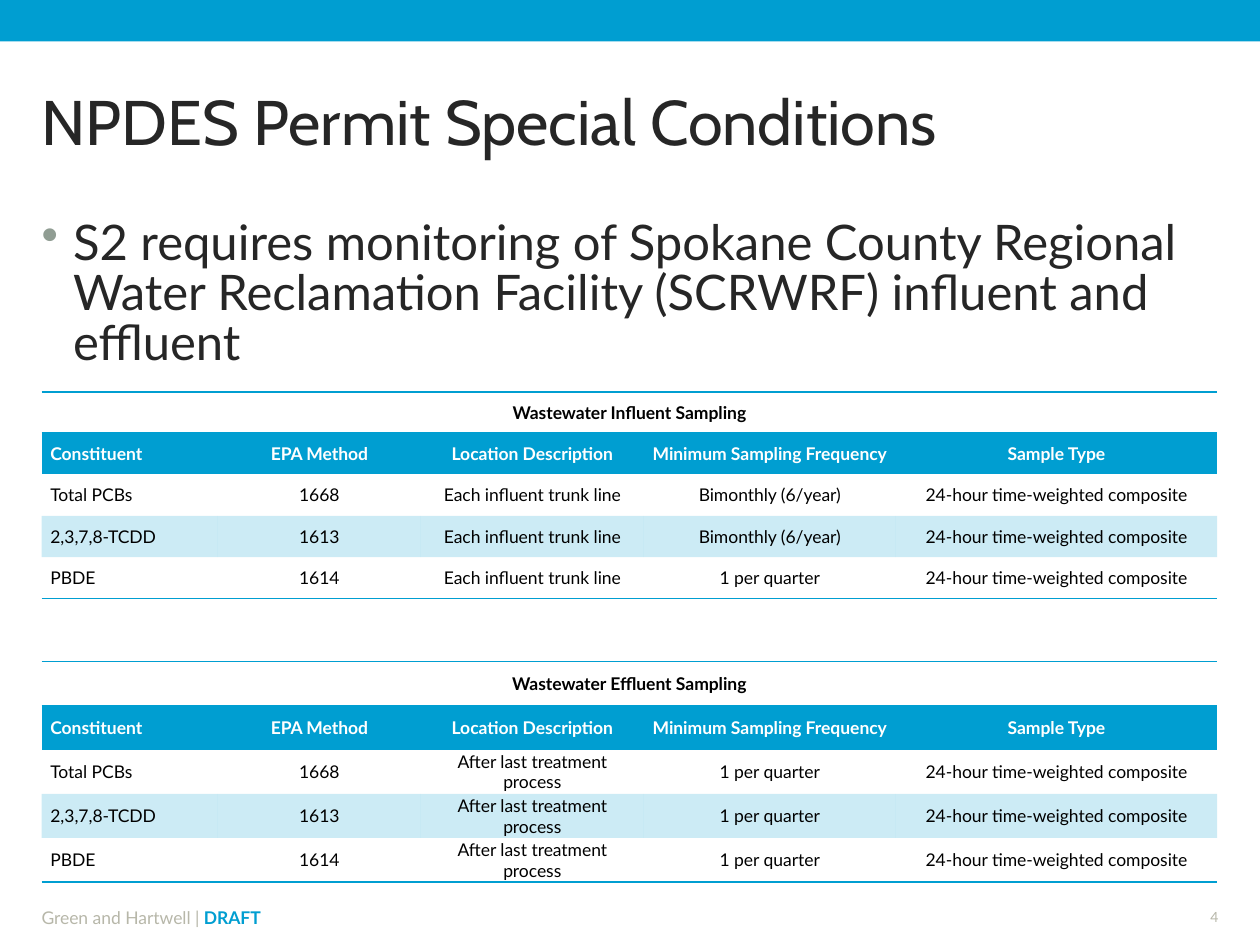
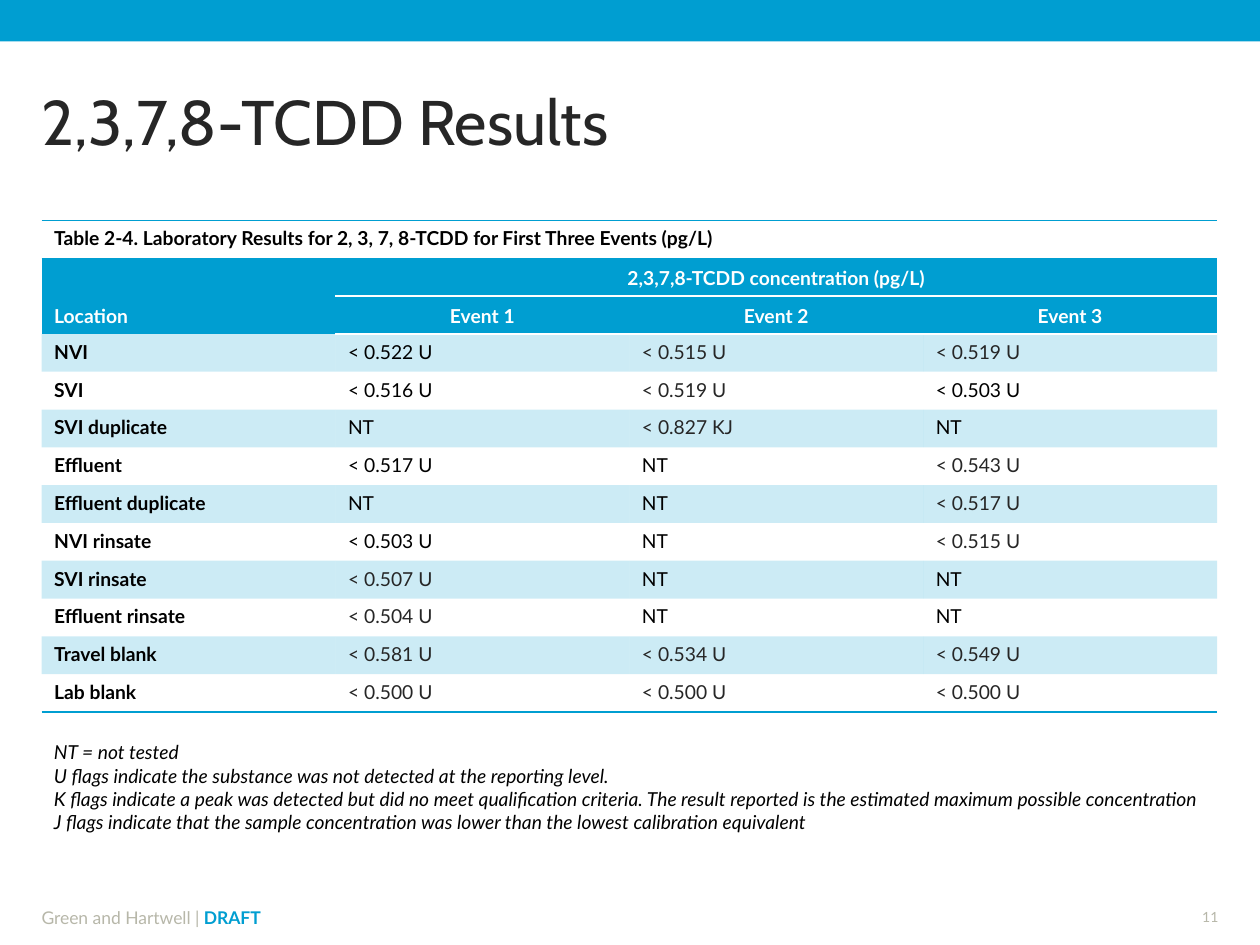
from dataclasses import dataclass, replace
from typing import Optional

from lxml.etree import SubElement
from pptx import Presentation
from pptx.dml.color import RGBColor
from pptx.enum.shapes import MSO_SHAPE
from pptx.enum.text import MSO_ANCHOR as Anchor, PP_ALIGN as Align
from pptx.oxml.ns import qn
from pptx.util import Inches, Pt

COLORS = {
    "blue": "009ED1",
    "ink": "262626",
    "black": "000000",
    "white": "FFFFFF",
    "footer": "B7B7A9",
    "bullet": "909D93",
}
LEFT, CONTENT_WIDTH = 0.33, 9.33
PLAIN_TABLE_STYLE = "{2D5ABB26-0587-4C30-8999-92F81FD0307C}"
TINT_PERCENT = 20


@dataclass(frozen=True)
class Style:
    size: float
    color: str = "black"
    font: str = "Lato"
    bold: bool = False
    italic: bool = False


@dataclass(frozen=True)
class Box:
    left: float
    top: float
    width: float
    height: float

    def lengths(self) -> list:
        return [Inches(n) for n in (self.left, self.top, self.width, self.height)]


@dataclass(frozen=True)
class Cell:
    text: str
    style: Style
    align: Align = Align.LEFT
    anchor: Anchor = Anchor.TOP
    fill: Optional[str] = None
    tinted: bool = False
    top_line: Optional[str] = None
    bottom_line: Optional[str] = None
    rows: int = 1
    columns: int = 1


TITLE = Style(36, "ink", "Cabin")
BODY = Style(28, "ink")
FOOTER = Style(10, "footer")
DRAFT = Style(10, "blue", bold=True)
PAGE_NUMBER = Style(8, "footer")
NOTE = Style(11, italic=True)
SAMPLING = Style(10)
RESULT = Style(11)

SAMPLING_COLUMNS = [1.4, 1.61, 1.77, 2, 2.55]
SAMPLING_HEADINGS = ["Constituent", "EPA Method", "Location Description",
                     "Minimum Sampling Frequency", "Sample Type"]
METHODS = [("Total PCBs", "1668"), ("2,3,7,8-TCDD", "1613"), ("PBDE", "1614")]
SAMPLE_TYPE = "24-hour time-weighted composite"

RESULTS = [
    ("NVI", "< 0.522 U", "< 0.515 U", "< 0.519 U"),
    ("SVI", "< 0.516 U", "< 0.519 U", "< 0.503 U"),
    ("SVI duplicate", "NT", "< 0.827 KJ", "NT"),
    ("Effluent", "< 0.517 U", "NT", "< 0.543 U"),
    ("Effluent duplicate", "NT", "NT", "< 0.517 U"),
    ("NVI rinsate", "< 0.503 U", "NT", "< 0.515 U"),
    ("SVI rinsate", "< 0.507 U", "NT", "NT"),
    ("Effluent rinsate", "< 0.504 U", "NT", "NT"),
    ("Travel blank", "< 0.581 U", "< 0.534 U", "< 0.549 U"),
    ("Lab blank", "< 0.500 U", "< 0.500 U", "< 0.500 U"),
]
BLACK_RESULTS = {("NVI", 1), ("SVI", 1), ("SVI", 3), ("Effluent", 1), ("NVI rinsate", 1)}
FLAG_NOTES = [
    "NT = not tested",
    "U flags indicate the substance was not detected at the reporting level.",
    "K flags indicate a peak was detected but did no meet qualification criteria. "
    "The result reported is the estimated maximum possible concentration",
    "J flags indicate that the sample concentration was lower than the lowest "
    "calibration equivalent",
]


def rgb(color: str) -> RGBColor:
    return RGBColor.from_string(COLORS[color])


def set_all(target, values: dict) -> None:
    for attribute, value in values.items():
        setattr(target, attribute, value)


def add_run(paragraph, text: str, style: Style) -> None:
    run = paragraph.add_run()
    run.text = text
    set_all(run.font, {"size": Pt(style.size), "name": style.font,
                       "bold": style.bold, "italic": style.italic})
    run.font.color.rgb = rgb(style.color)


def margins(left: float, top: float, right: float, bottom: float) -> dict:
    return {"margin_left": Inches(left), "margin_top": Inches(top),
            "margin_right": Inches(right), "margin_bottom": Inches(bottom)}


def add_text(slide, box: Box, paragraphs: list, insets: tuple = (0, 0.05, 0, 0.05),
             anchor: Anchor = Anchor.MIDDLE, align: Align = Align.LEFT,
             line_spacing: float = 1.0):
    """Each paragraph is a list of (text, style) runs."""
    frame = slide.shapes.add_textbox(*box.lengths()).text_frame
    set_all(frame, {"word_wrap": True, "vertical_anchor": anchor, **margins(*insets)})
    for index, runs in enumerate(paragraphs):
        paragraph = frame.add_paragraph() if index else frame.paragraphs[0]
        set_all(paragraph, {"alignment": align, "line_spacing": line_spacing})
        for text, style in runs:
            add_run(paragraph, text, style)
    return frame


def add_bullet(paragraph) -> None:
    properties = paragraph._p.get_or_add_pPr()
    properties.set("marL", str(Inches(0.25)))
    properties.set("indent", str(Inches(-0.25)))
    color = SubElement(properties, qn("a:buClr"))
    SubElement(color, qn("a:srgbClr"), val=COLORS["bullet"])
    SubElement(properties, qn("a:buChar"), char="•")


def add_page(deck, title: str, number: int):
    """Add a slide with the top band, title, footer and page number."""
    slide = deck.slides.add_slide(deck.slide_layouts[6])
    band = slide.shapes.add_shape(MSO_SHAPE.RECTANGLE, *Box(0, 0, 10, 0.33).lengths())
    band.shadow.inherit = False
    band.fill.solid()
    band.fill.fore_color.rgb = rgb("blue")
    band.line.fill.background()
    add_text(slide, Box(LEFT, 0.5, CONTENT_WIDTH, 1), [[(title, TITLE)]],
             insets=(0, 0.05, 0.1, 0.05), line_spacing=0.85)
    add_text(slide, Box(LEFT, 7.17, 8.83, 0.23),
             [[("Green and Hartwell | ", FOOTER), ("DRAFT", DRAFT)]])
    add_text(slide, Box(9.25, 7.15, 0.42, 0.25), [[(str(number), PAGE_NUMBER)]],
             align=Align.RIGHT)
    return slide


def draw_lines(cell, content: Cell) -> None:
    properties = cell._tc.get_or_add_tcPr()
    lines = [("a:lnT", content.top_line), ("a:lnB", content.bottom_line)]
    for index, (side, color) in enumerate(line for line in lines if line[1]):
        line = SubElement(properties, qn(side), w=str(Pt(1)))
        fill = SubElement(line, qn("a:solidFill"))
        SubElement(fill, qn("a:srgbClr"), val=COLORS[color])
        properties.insert(index, line)


def fill_cell(cell, content: Cell, insets: tuple) -> None:
    set_all(cell, {"vertical_anchor": content.anchor, **margins(*insets)})
    paragraph = cell.text_frame.paragraphs[0]
    paragraph.alignment = content.align
    add_run(paragraph, content.text, content.style)
    if content.fill or content.tinted:
        cell.fill.solid()
        cell.fill.fore_color.rgb = rgb(content.fill or "blue")
    else:
        cell.fill.background()
    if content.tinted:
        tint = next(cell._tc.get_or_add_tcPr().iter(qn("a:srgbClr")))
        SubElement(tint, qn("a:alpha"), val=str(TINT_PERCENT * 1000))
    draw_lines(cell, content)


def add_table(slide, top: float, height: float, widths: list, rows: list, insets: tuple) -> None:
    box = Box(LEFT, top, CONTENT_WIDTH, height)
    table = slide.shapes.add_table(len(rows), len(widths), *box.lengths()).table
    set_all(table, {"first_row": False, "horz_banding": False})
    table._tbl.tblPr.find(qn("a:tableStyleId")).text = PLAIN_TABLE_STYLE
    for column, width in zip(table.columns, widths):
        column.width = Inches(width)
    for r, contents in enumerate(rows):
        table.rows[r].height = Inches(height / len(rows))
        for c, content in enumerate(contents):
            cell = table.cell(r, c)
            fill_cell(cell, content, insets)
            if content.rows * content.columns > 1:
                cell.merge(table.cell(r + content.rows - 1, c + content.columns - 1))


def spanning_row(first: Cell, count: int) -> list:
    """A cell across several columns, with the covered cells left empty."""
    covered = replace(first, text="", columns=1)
    return [replace(first, columns=count)] + [covered] * (count - 1)


def last_row_line(index: int, count: int) -> Optional[str]:
    return "blue" if index == count - 1 else None


def add_sampling_table(slide, top: float, height: float, stream: str,
                       location: str, frequencies: list) -> None:
    bold = replace(SAMPLING, bold=True)
    caption = Cell(f"Wastewater {stream} Sampling", bold, Align.CENTER, Anchor.MIDDLE,
                   top_line="blue", bottom_line="blue")

    def cells(texts, **options) -> list:
        return [Cell(text, align=Align.CENTER if column else Align.LEFT,
                     anchor=Anchor.MIDDLE, **options)
                for column, text in enumerate(texts)]

    rows = [spanning_row(caption, len(SAMPLING_COLUMNS)),
            cells(SAMPLING_HEADINGS, style=replace(bold, color="white"), fill="blue")]
    for index, (method, frequency) in enumerate(zip(METHODS, frequencies)):
        rows.append(cells((*method, location, frequency, SAMPLE_TYPE), style=SAMPLING,
                          tinted=index % 2 == 1,
                          bottom_line=last_row_line(index, len(METHODS))))
    add_table(slide, top, height, SAMPLING_COLUMNS, rows, (0.07, 0, 0.07, 0))


def result_style(location: str, column: int, text: str) -> Style:
    if column == 0:
        return replace(RESULT, bold=True)
    if text == "NT" or (location, column) in BLACK_RESULTS:
        return RESULT
    return replace(RESULT, color="ink")


def add_results_table(slide) -> None:
    bold = replace(RESULT, bold=True)
    caption = Cell("Table 2-4. Laboratory Results for 2, 3, 7, 8-TCDD for First Three "
                   "Events (pg/L)", bold, top_line="blue", bottom_line="blue")
    heading = Cell("", replace(bold, color="white"), Align.CENTER, Anchor.BOTTOM, "blue")
    location = replace(heading, text="Location", align=Align.LEFT, rows=2)
    concentration = replace(heading, text="2,3,7,8-TCDD concentration (pg/L)",
                            bottom_line="white")
    events = [replace(heading, text=f"Event {n}", top_line="white") for n in (1, 2, 3)]
    rows = [spanning_row(caption, 4),
            [location, *spanning_row(concentration, 3)],
            [heading, *events]]
    for index, result in enumerate(RESULTS):
        rows.append([Cell(text, result_style(result[0], column, text),
                          tinted=index % 2 == 0,
                          bottom_line=last_row_line(index, len(RESULTS)))
                     for column, text in enumerate(result)])
    add_table(slide, 1.75, 3.9, [CONTENT_WIDTH / 4] * 4, rows, (0.1, 0.05, 0.1, 0.05))


def build_conditions(deck) -> None:
    slide = add_page(deck, "NPDES Permit Special Conditions", 4)
    requirement = ("S2 requires monitoring of Spokane County Regional Water Reclamation "
                   "Facility (SCRWRF) influent and effluent")
    body = add_text(slide, Box(LEFT, 1.75, CONTENT_WIDTH, 5.25), [[(requirement, BODY)]],
                    insets=(0, 0, 0, 0), anchor=Anchor.TOP, line_spacing=0.85)
    add_bullet(body.paragraphs[0])
    quarterly, bimonthly = "1 per quarter", "Bimonthly (6/year)"
    add_sampling_table(slide, 3.11, 1.64, "Influent", "Each influent trunk line",
                       [bimonthly, bimonthly, quarterly])
    add_sampling_table(slide, 5.25, 1.75, "Effluent", "After last treatment process",
                       [quarterly] * 3)


def build_results(deck) -> None:
    slide = add_page(deck, "2,3,7,8-TCDD Results", 11)
    add_results_table(slide)
    add_text(slide, Box(LEFT, 5.83, 9.67, 0.84), [[(note, NOTE)] for note in FLAG_NOTES],
             insets=(0.1, 0.05, 0.1, 0.05), anchor=Anchor.TOP)


def main() -> None:
    deck = Presentation()
    set_all(deck, {"slide_width": Inches(10), "slide_height": Inches(7.5)})
    build_conditions(deck)
    build_results(deck)
    deck.save("out.pptx")


if __name__ == "__main__":
    main()
